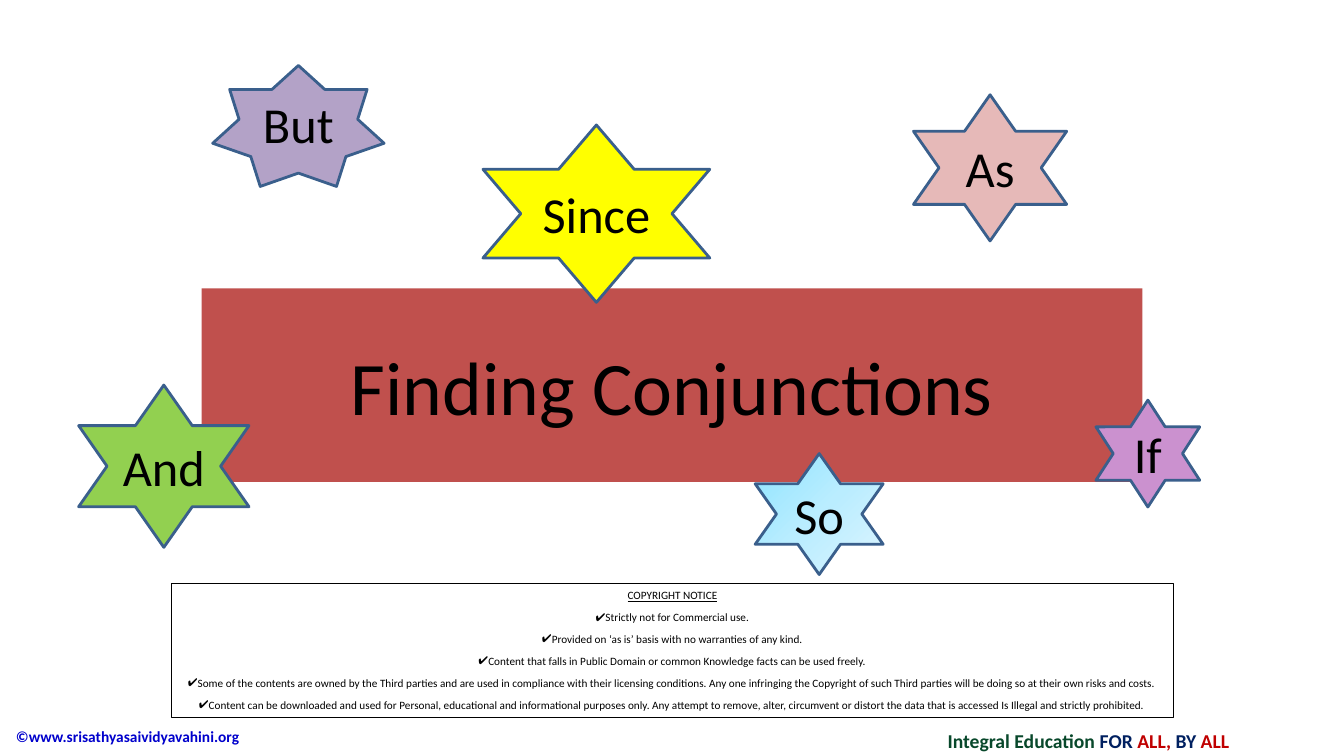
"""Builds the opening slide of a lesson on finding conjunctions."""
from lxml.etree import SubElement
from pptx import Presentation
from pptx.dml.color import RGBColor
from pptx.enum.shapes import MSO_SHAPE as Shape
from pptx.enum.text import MSO_ANCHOR as Anchor, MSO_AUTO_SIZE as AutoSize, PP_ALIGN as Align
from pptx.oxml import parse_xml
from pptx.oxml.ns import nsdecls, qn
from pptx.util import Pt

PX = 9144
BLACK = RGBColor(0x00, 0x00, 0x00)
WHITE = RGBColor(0xFF, 0xFF, 0xFF)
BRICK = RGBColor(0xC0, 0x50, 0x4D)
OUTLINE = RGBColor(0x3A, 0x5F, 0x8C)
LILAC = RGBColor(0xB3, 0xA2, 0xC7)
GREEN = RGBColor(0x92, 0xD0, 0x50)
YELLOW = RGBColor(0xFF, 0xFF, 0x00)
ROSE = RGBColor(0xE6, 0xB9, 0xB8)
ORCHID = RGBColor(0xCB, 0x91, 0xCF)
SKY = RGBColor(0x8F, 0xE4, 0xFF)
PALE_SKY = RGBColor(0xBA, 0xED, 0xFF)
ICE = RGBColor(0xDD, 0xF5, 0xFF)
LINK_BLUE = RGBColor(0x00, 0x00, 0xCC)
FOREST = RGBColor(0x08, 0x48, 0x2B)
NAVY = RGBColor(0x00, 0x20, 0x60)
RED = RGBColor(0xC0, 0x00, 0x00)

STARS = [
    ("But", Shape.STAR_7_POINT, (211, 65, 170, 120), [LILAC]),
    ("And", Shape.STAR_6_POINT, (78, 382, 169, 161), [GREEN]),
    ("Since", Shape.STAR_6_POINT, (479, 124, 225, 176), [YELLOW]),
    ("As", Shape.STAR_6_POINT, (906, 94, 152, 145), [ROSE]),
    ("So", Shape.STAR_6_POINT, (749, 450, 127, 120), [SKY, PALE_SKY, ICE]),
    ("If", Shape.STAR_6_POINT, (1087, 397, 103, 106), [ORCHID]),
]
TERMS = [
    "Strictly not for Commercial use.",
    "Provided on ‘as is’ basis with no warranties of any kind.",
    "Content that falls in Public Domain or common Knowledge facts can be used freely.",
    "Some of the contents are owned by the Third parties and are used in compliance with their "
    "licensing conditions. Any one infringing the Copyright of such Third parties will be doing "
    "so at their own risks and costs.",
    "Content can be downloaded and used for Personal, educational and informational purposes "
    "only. Any attempt to remove, alter, circumvent or distort the data that is accessed "
    "Is Illegal and strictly prohibited.",
]
MOTTO = [("Integral Education ", FOREST), ("FOR ", NAVY), ("ALL, ", RED), ("BY", NAVY), (" ALL", RED)]


class Canvas:
    """Holds the lesson style and the slide being built."""

    def __init__(self, slide, typeface):
        self.slide = slide
        self.typeface = typeface

    def style(self, paragraph, size, color=None, bold=False, align=Align.CENTER):
        paragraph.alignment = align
        font = paragraph.font
        font.name, font.size, font.bold = self.typeface, Pt(size), bold
        if color is not None:
            font.color.rgb = color

    def place(self, part, box):
        part.left, part.top, part.width, part.height = (n * PX for n in box)

    def banner(self, wording, box):
        title = self.slide.shapes.title
        self.place(title, box)
        title.fill.solid()
        title.fill.fore_color.rgb = BRICK
        frame = title.text_frame
        frame.text = wording
        frame.auto_size, frame.vertical_anchor = AutoSize.NONE, Anchor.MIDDLE
        self.style(frame.paragraphs[0], 54, BLACK)

    def notice(self, heading, terms, box):
        body = self.slide.placeholders[1]
        self.place(body, box)
        body.line.color.rgb = BLACK
        body.line.width = Pt(0.75)
        frame = body.text_frame
        frame.text = "\n".join([heading, *terms])
        frame.auto_size, frame.vertical_anchor = AutoSize.NONE, Anchor.TOP
        first, *rest = frame.paragraphs
        self.bullet(first, None)
        first.space_before = Pt(0)
        self.style(first, 8, BLACK)
        first.font.underline = True
        for term in rest:
            self.bullet(term, "✔")
            term.space_before = Pt(6)
            self.style(term, 8, BLACK)

    def bullet(self, paragraph, mark):
        properties = paragraph._p.get_or_add_pPr()
        properties.set("marL", "0")
        properties.set("indent", str(-6 * PX if mark else 0))
        if mark:
            tint = SubElement(properties, qn("a:buClr"))
            SubElement(tint, qn("a:srgbClr")).set("val", str(BLACK))
            SubElement(properties, qn("a:buChar")).set("char", mark)
        else:
            SubElement(properties, qn("a:buNone"))

    def star(self, word, outline, box, colors):
        star = self.slide.shapes.add_shape(outline, *(n * PX for n in box))
        star.shadow.inherit = False
        star.fill.solid()
        star.fill.fore_color.rgb = colors[0]
        if len(colors) > 1:
            self.glow(star, colors)
        star.line.color.rgb = OUTLINE
        star.line.width = Pt(2)
        frame = star.text_frame
        frame.text = word
        frame.word_wrap, frame.vertical_anchor = False, Anchor.MIDDLE
        self.style(frame.paragraphs[0], 36, BLACK)

    def glow(self, star, colors):
        step = 100000 // (len(colors) - 1)
        stops = "".join(
            f'<a:gs pos="{i * step}"><a:srgbClr val="{color}"/></a:gs>'
            for i, color in enumerate(colors)
        )
        gradient = parse_xml(
            f'<a:gradFill {nsdecls("a")} rotWithShape="1"><a:gsLst>{stops}</a:gsLst>'
            '<a:path path="circle"><a:fillToRect r="100000" b="100000"/></a:path></a:gradFill>'
        )
        properties = star._element.spPr
        properties.replace(properties.find(qn("a:solidFill")), gradient)

    def label(self, parts, box, size, align):
        frame = self.slide.shapes.add_textbox(*(n * PX for n in box)).text_frame
        frame.word_wrap, frame.vertical_anchor = True, Anchor.MIDDLE
        line = frame.paragraphs[0]
        self.style(line, size, bold=True, align=align)
        for wording, color in parts:
            run = line.add_run()
            run.text = wording
            run.font.color.rgb = color


def main():
    deck = Presentation()
    deck.slide_width, deck.slide_height = 1333 * PX, 750 * PX
    slide = deck.slides.add_slide(deck.slide_layouts[1])
    slide.background.fill.solid()
    slide.background.fill.fore_color.rgb = WHITE

    canvas = Canvas(slide, "Calibri")
    canvas.banner("Finding Conjunctions", (200, 286, 933, 192))
    canvas.notice("COPYRIGHT NOTICE", TERMS, (170, 579, 994, 133))
    for star in STARS:
        canvas.star(*star)
    site = [("©www.srisathyasaividyavahini.org", LINK_BLUE)]
    canvas.label(site, (6, 710, 353, 41), 11, Align.LEFT)
    canvas.label(MOTTO, (835, 712, 489, 45), 14, Align.CENTER)
    deck.save("out.pptx")


if __name__ == "__main__":
    main()
